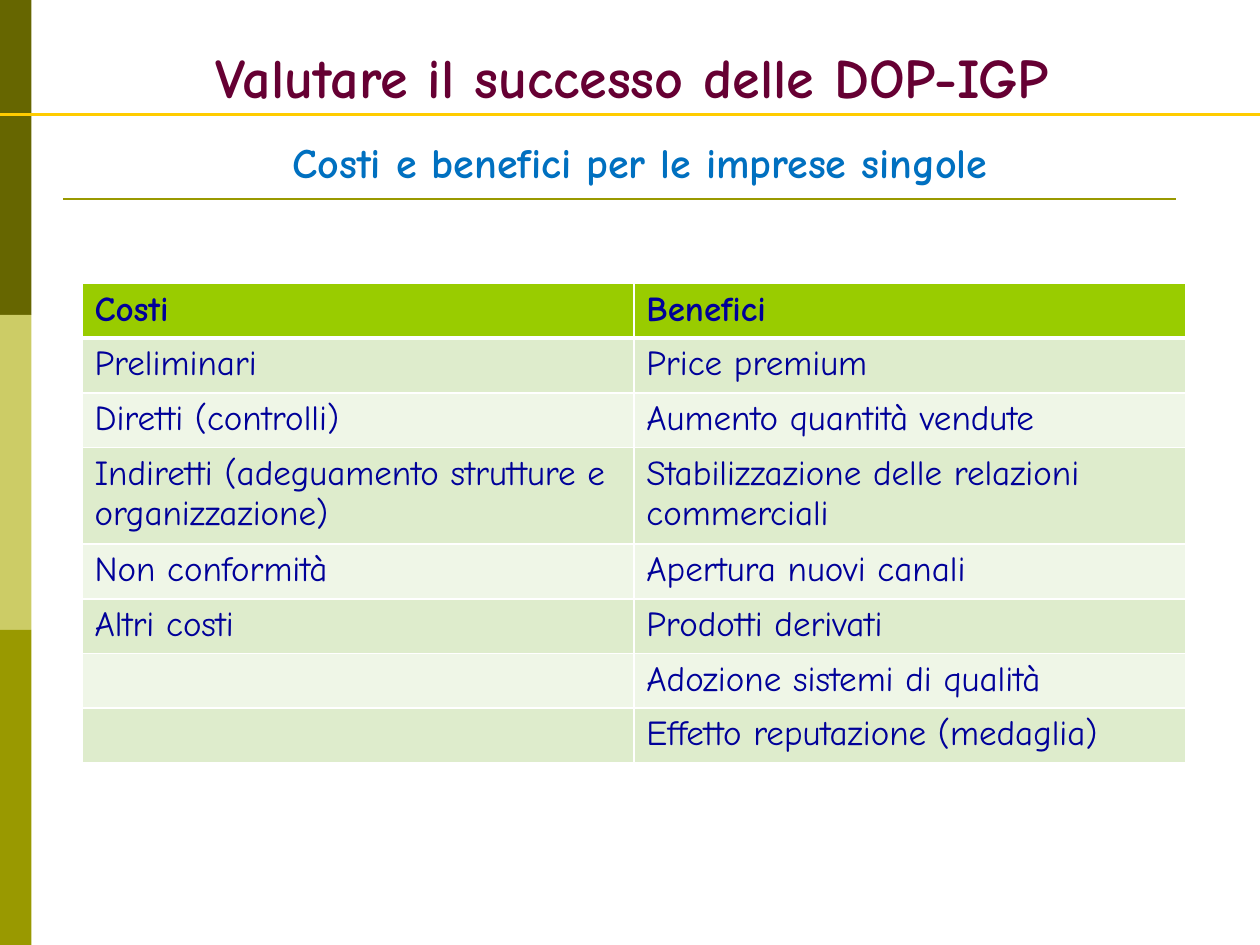
from dataclasses import dataclass

from lxml import etree
from pptx import Presentation
from pptx.dml.color import RGBColor
from pptx.enum.shapes import MSO_CONNECTOR, MSO_SHAPE
from pptx.enum.text import MSO_ANCHOR, PP_ALIGN
from pptx.oxml.ns import qn
from pptx.util import Inches, Pt

RECTANGLE = MSO_SHAPE.RECTANGLE
STRAIGHT = MSO_CONNECTOR.STRAIGHT
BOTTOM = MSO_ANCHOR.BOTTOM
CENTER = PP_ALIGN.CENTER
LEFT = PP_ALIGN.LEFT


@dataclass(frozen=True)
class Theme:
    font: str = "Comic Neue"
    title_size: int = 32
    subtitle_size: int = 24
    table_size: int = 20
    title: str = "660033"
    subtitle: str = "0070C0"
    table_text: str = "000099"
    header: str = "99CC00"
    bands: tuple = ("DEECCC", "EFF6E7")
    border: str = "FFFFFF"
    sidebar: tuple = ("666600", "CCCC66", "999900")
    title_rule: str = "FFCC00"
    subtitle_rule: str = "999900"


THEME = Theme()

ROWS = [
    ("Costi", "Benefici"),
    ("Preliminari", "Price premium"),
    ("Diretti (controlli)", "Aumento quantità vendute"),
    ("Indiretti (adeguamento strutture e organizzazione)",
     "Stabilizzazione delle relazioni commerciali"),
    ("Non conformità", "Apertura nuovi canali"),
    ("Altri costi", "Prodotti derivati"),
    ("", "Adozione sistemi di qualità"),
    ("", "Effetto reputazione (medaglia)"),
]
ROW_HEIGHT = 0.43
TWO_LINE_HEIGHT = 0.76
COLUMN_WIDTH = 4.38
TWO_LINE_ROW = 3


def write_text(frame, text, *, size, color, bold=False, align=LEFT, spacing=None):
    para = frame.paragraphs[0]
    para.alignment = align
    if spacing:
        para.line_spacing = spacing
    span = para.add_run()
    span.text = text
    span.font.name = THEME.font
    span.font.size = Pt(size)
    span.font.bold = bold
    span.font.color.rgb = RGBColor.from_string(color)


def add_heading(page, text, left, top, width, height, **text_format):
    box = page.shapes.add_textbox(
        Inches(left), Inches(top), Inches(width), Inches(height))
    box.text_frame.word_wrap = True
    box.text_frame.vertical_anchor = BOTTOM
    write_text(box.text_frame, text, bold=True, align=CENTER, **text_format)


def add_block(page, left, top, width, height, color):
    block = page.shapes.add_shape(
        RECTANGLE, Inches(left), Inches(top), Inches(width), Inches(height))
    block.shadow.inherit = False
    block.fill.solid()
    block.fill.fore_color.rgb = RGBColor.from_string(color)
    block.line.fill.background()


def add_rule(page, start, end, y, color, weight):
    rule = page.shapes.add_connector(
        STRAIGHT, Inches(start), Inches(y), Inches(end), Inches(y))
    rule.line.color.rgb = RGBColor.from_string(color)
    rule.line.width = Pt(weight)
    etree.SubElement(rule.element.spPr, qn("a:effectLst"))


def set_borders(cell, **weights):
    properties = cell._tc.get_or_add_tcPr()
    for position, side in enumerate(("L", "R", "T", "B")):
        border = etree.Element(qn(f"a:ln{side}"), w=str(Pt(weights.get(side, 1))))
        fill = etree.SubElement(border, qn("a:solidFill"))
        etree.SubElement(fill, qn("a:srgbClr"), val=THEME.border)
        properties.insert(position, border)


def add_comparison(page, left, top):
    height = ROW_HEIGHT * (len(ROWS) - 1) + TWO_LINE_HEIGHT
    table = page.shapes.add_table(
        len(ROWS), 2, Inches(left), Inches(top),
        Inches(2 * COLUMN_WIDTH), Inches(height)).table
    for column in table.columns:
        column.width = Inches(COLUMN_WIDTH)
    for index, texts in enumerate(ROWS):
        is_header = index == 0
        two_lines = index == TWO_LINE_ROW
        table.rows[index].height = Inches(TWO_LINE_HEIGHT if two_lines else ROW_HEIGHT)
        color = THEME.header if is_header else THEME.bands[(index - 1) % 2]
        for cell, text in zip(table.rows[index].cells, texts):
            cell.fill.solid()
            cell.fill.fore_color.rgb = RGBColor.from_string(color)
            set_borders(cell, B=3 if is_header else 1, T=3 if index == 1 else 1)
            if text:
                write_text(cell.text_frame, text, size=THEME.table_size,
                           color=THEME.table_text, bold=is_header)


def main():
    deck = Presentation()
    deck.slide_width, deck.slide_height = Inches(10), Inches(7.5)
    page = deck.slides.add_slide(deck.slide_layouts[6])

    # Sidebar of three equal blocks
    for index, color in enumerate(THEME.sidebar):
        add_block(page, 0, 2.5 * index, 0.25, 2.5, color)

    # Headings, each with the rule below it
    add_rule(page, 0.5, 9.33, 1.58, THEME.subtitle_rule, 1.5)
    add_heading(page, "Valutare il successo delle DOP-IGP", 0.47, 0.28, 9.1, 0.64,
                size=THEME.title_size, color=THEME.title)
    add_rule(page, 0, 10, 0.91, THEME.title_rule, 2)
    add_heading(page, "Costi e benefici per le imprese singole", 0.51, 1.07, 9.14, 0.47,
                size=THEME.subtitle_size, color=THEME.subtitle, spacing=0.9)

    # Costs and benefits
    add_comparison(page, 0.65, 2.25)

    deck.save("out.pptx")


if __name__ == "__main__":
    main()
